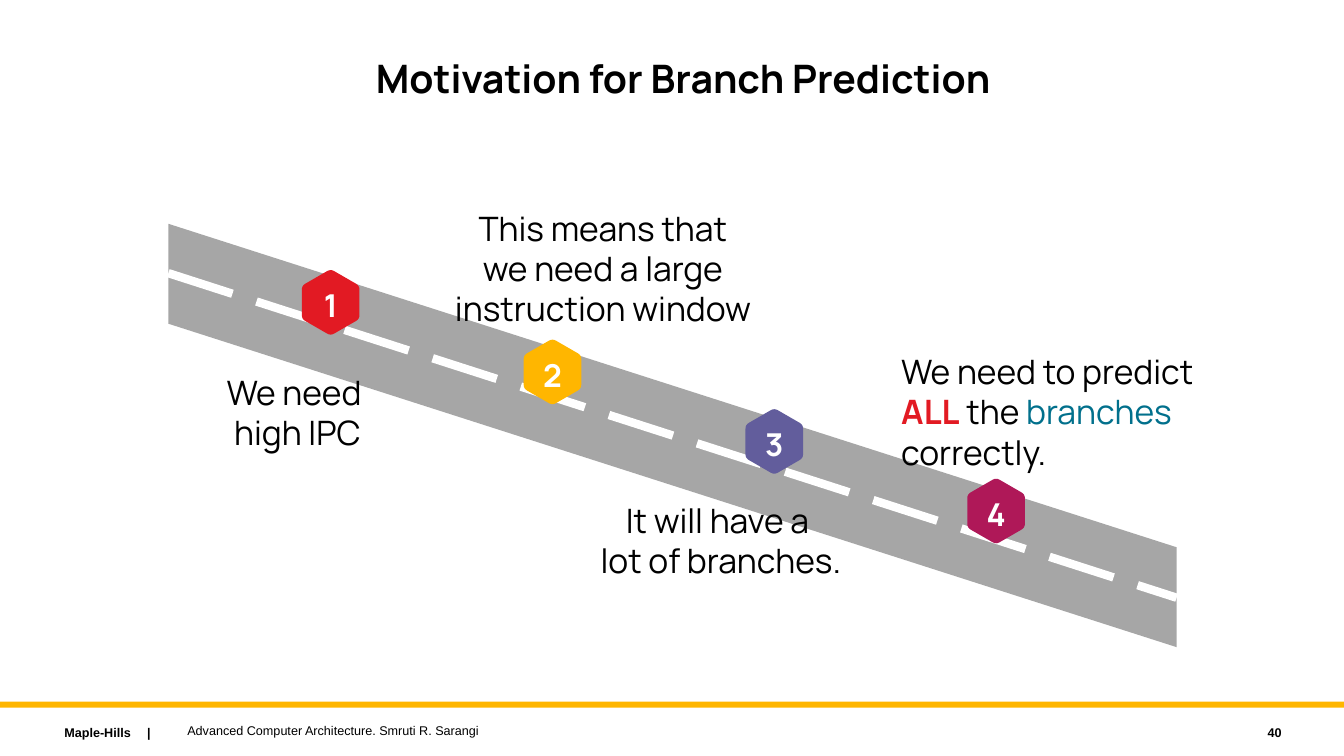
from dataclasses import dataclass
from math import cos, pi, sin
from typing import Sequence

from lxml import etree
from pptx import Presentation
from pptx import util as u
from pptx.dml.color import RGBColor
from pptx.enum import dml, shapes, text
from pptx.oxml.ns import qn


@dataclass(frozen=True)
class Theme:
    head: str = "Manrope"
    foot: str = "Arial"
    black: str = "000000"
    white: str = "FFFFFF"
    grey: str = "A6A6A6"
    red: str = "E21A23"
    gold: str = "FFB600"
    violet: str = "625D9C"
    plum: str = "AF1858"
    teal: str = "01708C"
    title: float = 28
    body: float = 24
    badge: float = 22.5
    small: float = 9


@dataclass(frozen=True)
class Span:
    words: str
    color: str = Theme.black
    bold: bool = False


@dataclass(frozen=True)
class Box:
    left: float
    top: float
    width: float
    height: float

    def place(self) -> list:
        return [u.Inches(v) for v in (self.left, self.top, self.width, self.height)]


@dataclass(frozen=True)
class Step:
    color: str
    box: Box
    lines: Sequence
    align: str = "CENTER"


look = Theme()
STEPS = [
    Step(look.red, Box(2.06, 3.63, 1.78, 0.91), ["We need ", "high IPC"]),
    Step(look.gold, Box(4.3, 2, 3.36, 1.31),
         ["This means that", "we need a large", "instruction window"]),
    Step(look.violet, Box(5.75, 4.9, 2.8, 0.91), ["It will have a ", "lot of branches."]),
    Step(look.plum, Box(8.84, 3.42, 3.41, 1.31),
         ["We need to predict",
          [Span("ALL", look.red, True), Span(" the "), Span("branches", look.teal)],
          "correctly."], "LEFT"),
]


def write(shape, lines: Sequence, *, size: float, font: str = look.head,
          color: str = look.black, bold: bool = False, align: str = "LEFT",
          anchor: str = "TOP", wrap: bool = False, tab: float = 0) -> None:
    frame = shape.text_frame
    frame.word_wrap = wrap
    frame.auto_size = getattr(text.MSO_AUTO_SIZE, "NONE" if wrap else "SHAPE_TO_FIT_TEXT")
    frame.vertical_anchor = getattr(text.MSO_ANCHOR, anchor)
    for i, line in enumerate(lines):
        para = frame.add_paragraph() if i else frame.paragraphs[0]
        para.alignment = getattr(text.PP_ALIGN, align)
        if tab:
            stops = etree.SubElement(para._p.get_or_add_pPr(), qn("a:tabLst"))
            etree.SubElement(stops, qn("a:tab"), pos=str(u.Inches(tab)), algn="l")
        for span in [Span(line, color, bold)] if isinstance(line, str) else line:
            run = para.add_run()
            run.text = span.words
            run.font.name, run.font.size = font, u.Pt(size)
            run.font.bold = span.bold
            run.font.color.rgb = RGBColor.from_string(span.color)


def label(slide, box: Box, lines: Sequence, **form) -> None:
    write(slide.shapes.add_textbox(*box.place()), lines, **form)


def paint(shape, color: str) -> None:
    shape.shadow.inherit = False
    shape.fill.solid()
    shape.fill.fore_color.rgb = RGBColor.from_string(color)
    shape.line.fill.background()


def block(slide, kind, box: Box, color: str):
    shape = slide.shapes.add_shape(kind, *box.place())
    paint(shape, color)
    return shape


def badge(slide, x: float, y: float, color: str) -> None:
    radius, cut = 0.33, 0.12
    tips = [(x + radius * sin(k * pi / 3), y - radius * cos(k * pi / 3)) for k in range(6)]
    points = []
    for k, tip in enumerate(tips):
        start, end = ([t + (n - t) * cut for t, n in zip(tip, near)]
                      for near in (tips[k - 1], tips[(k + 1) % 6]))
        for t in (0, 0.25, 0.5, 0.75, 1):
            points.append([u.Inches((1 - t) ** 2 * a + 2 * t * (1 - t) * b + t * t * c)
                           for a, b, c in zip(start, tip, end)])
    path = slide.shapes.build_freeform(*points[0], scale=1.0)
    path.add_line_segments(points[1:], close=True)
    paint(path.convert_to_shape(), color)


def road(slide) -> None:
    lane = block(slide, shapes.MSO_SHAPE.PARALLELOGRAM, Box(4.57, -0.68, 4.2, 10), look.grey)
    lane.adjustments[0] = 0.764
    lane.rotation = 270
    ends = [u.Inches(v) for v in (1.67, 2.71, 11.67, 5.93)]
    dash = slide.shapes.add_connector(shapes.MSO_CONNECTOR.STRAIGHT, *ends)
    dash.line.color.rgb = RGBColor.from_string(look.white)
    dash.line.width = u.Pt(6)
    dash.line.dash_style = dml.MSO_LINE.LONG_DASH
    etree.SubElement(dash._element.spPr, qn("a:effectLst"))


def footer(slide) -> None:
    block(slide, shapes.MSO_SHAPE.RECTANGLE, Box(0, 6.96, 13.33, 0.06), look.gold)
    form = dict(size=look.small, font=look.foot, wrap=True)
    label(slide, Box(0.54, 7.14, 2.27, 0.25), ["Maple-Hills\t|"], bold=True, tab=0.82, **form)
    label(slide, Box(1.76, 7.12, 8, 0.25),
          ["Advanced Computer Architecture. Smruti R. Sarangi"], anchor="MIDDLE", **form)
    label(slide, Box(11.41, 7.14, 1.4, 0.25), ["40"], bold=True, align="RIGHT",
          anchor="MIDDLE", **form)


def main() -> None:
    deck = Presentation()
    deck.slide_width, deck.slide_height = u.Inches(13.33), u.Inches(7.5)
    slide = deck.slides.add_slide(deck.slide_layouts[5])
    footer(slide)
    road(slide)
    title = slide.shapes.title
    title.left, title.top, title.width, title.height = Box(3.41, 0.49, 6.73, 0.57).place()
    write(title, ["Motivation for Branch Prediction"], size=look.title, bold=True,
          align="CENTER")
    for i, step in enumerate(STEPS):
        x, y = 3.28 + 2.2 * i, 3 + 0.69 * i
        badge(slide, x, y, step.color)
        label(slide, Box(x - 0.2, y - 0.21, 0.4, 0.48), [str(i + 1)], size=look.badge,
              color=look.white, bold=True, align="CENTER")
        label(slide, step.box, step.lines, size=look.body, align=step.align, anchor="BOTTOM")
    deck.save("out.pptx")


if __name__ == "__main__":
    main()
